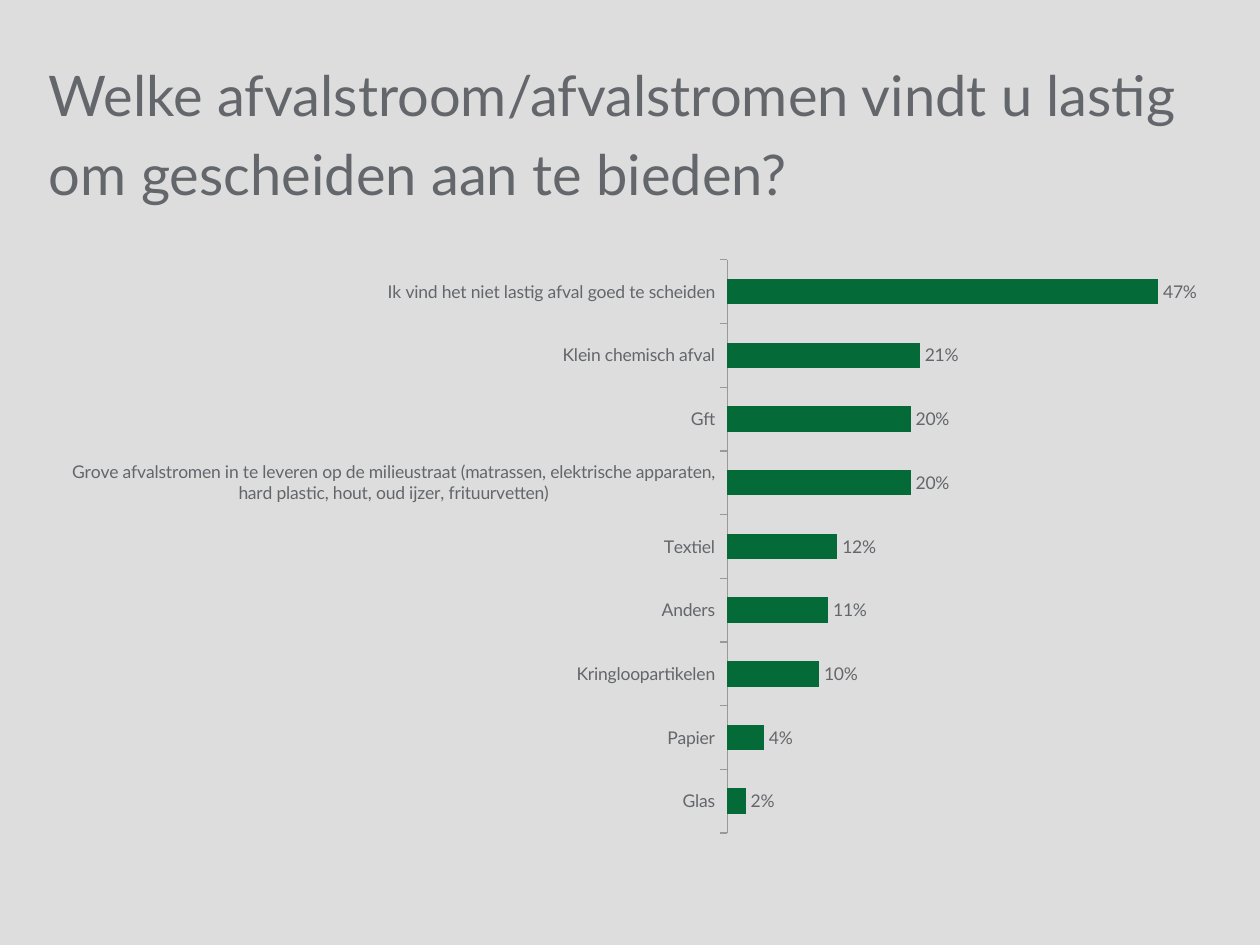
from pptx import Presentation
from pptx.chart.data import CategoryChartData
from pptx.dml.color import RGBColor
from pptx.enum.chart import XL_CHART_TYPE as ChartType, XL_LABEL_POSITION as LabelPos
from pptx.enum.chart import XL_TICK_LABEL_POSITION as TickLabelPos, XL_TICK_MARK as TickMark
from pptx.enum.text import MSO_ANCHOR as Anchor
from pptx.util import Emu, Pt

# Content
QUESTION = "Welke afvalstroom/afvalstromen vindt u lastig om gescheiden aan te bieden?"
ANSWERS = [
    ("Ik vind het niet lastig afval goed te scheiden", 0.47),
    ("Klein chemisch afval", 0.21),
    ("Gft", 0.20),
    ("Grove afvalstromen in te leveren op de milieustraat (matrassen, "
     "elektrische apparaten, hard plastic, hout, oud ijzer, frituurvetten)", 0.20),
    ("Textiel", 0.12),
    ("Anders", 0.11),
    ("Kringloopartikelen", 0.10),
    ("Papier", 0.04),
    ("Glas", 0.02),
]

# Format
BACKGROUND = RGBColor(0xDD, 0xDD, 0xDD)
GREY = RGBColor(0x63, 0x66, 0x6A)
GREEN = RGBColor(0x04, 0x6A, 0x38)
AXIS_GREY = RGBColor(0x99, 0x99, 0x99)
FONT = "Lato"
PX = 914400 // 126
TITLE_BOX = (49, 49, 1160, 149)
CHART_BOX = (49, 248, 1160, 597)


def px(*lengths):
    return [Emu(length * PX) for length in lengths]


def apply(target, formats):
    for name, value in formats.items():
        setattr(target, name, value)


def set_font(font, size):
    apply(font, {"name": FONT, "size": Pt(size), "bold": False})
    font.color.rgb = GREY


deck = Presentation()
deck.slide_width, deck.slide_height = px(1260, 945)
slide = deck.slides.add_slide(deck.slide_layouts[6])
slide.background.fill.solid()
slide.background.fill.fore_color.rgb = BACKGROUND

# Question
question = slide.shapes.add_textbox(*px(*TITLE_BOX)).text_frame
apply(question, {
    "word_wrap": True, "vertical_anchor": Anchor.TOP,
    "margin_left": 0, "margin_top": 0, "margin_right": 0, "margin_bottom": 0,
})
line = question.paragraphs[0]
line.text = QUESTION
line.line_spacing = Pt(45)
set_font(line.runs[0].font, 32)

# Answers as bars, largest on top
data = CategoryChartData(number_format="0%")
data.categories = [answer for answer, _ in ANSWERS]
data.add_series("Series 1", [share for _, share in ANSWERS])
chart = slide.shapes.add_chart(ChartType.BAR_CLUSTERED, *px(*CHART_BOX), data).chart
apply(chart, {"has_legend": False, "has_title": False})
set_font(chart.font, 10)

apply(chart.category_axis, {
    "reverse_order": True, "tick_label_position": TickLabelPos.LOW,
    "major_tick_mark": TickMark.OUTSIDE, "has_major_gridlines": False,
})
chart.category_axis.format.line.color.rgb = AXIS_GREY
chart.category_axis.format.line.width = Pt(0.75)
apply(chart.value_axis, {
    "visible": False, "minimum_scale": 0, "has_major_gridlines": False,
})

bars = chart.plots[0]
apply(bars, {"gap_width": 150, "vary_by_categories": False, "has_data_labels": True})
apply(bars.data_labels, {
    "show_value": True, "number_format": "0%", "number_format_is_linked": False,
    "position": LabelPos.OUTSIDE_END,
})
set_font(bars.data_labels.font, 10)
bar_fill = bars.series[0].format.fill
bar_fill.solid()
bar_fill.fore_color.rgb = GREEN

deck.save("out.pptx")
